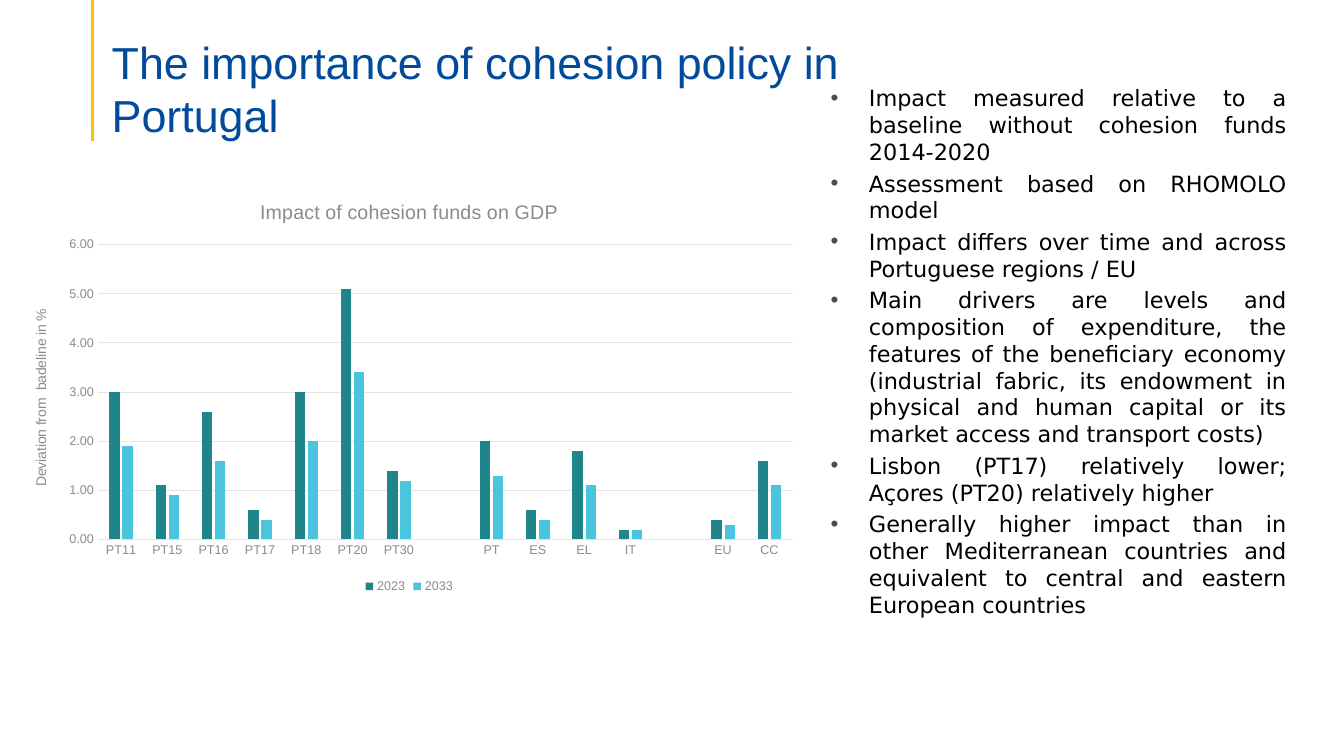
"""Build the slide on the importance of cohesion policy in Portugal."""
from lxml import etree
from pptx import Presentation
from pptx.chart.data import CategoryChartData
from pptx.dml.color import RGBColor
from pptx.enum.chart import XL_CHART_TYPE as CT, XL_LEGEND_POSITION as LP, XL_TICK_MARK as TM
from pptx.enum.shapes import MSO_CONNECTOR
from pptx.enum.text import PP_ALIGN
from pptx.oxml import parse_xml
from pptx.oxml.ns import nsdecls, qn
from pptx.util import Inches, Pt

TITLE = "The importance of cohesion policy in Portugal"
POINTS = [
    "Impact measured relative to a baseline without cohesion funds 2014-2020",
    "Assessment based on RHOMOLO model",
    "Impact differs over time and across Portuguese regions / EU",
    "Main drivers are levels and composition of expenditure, the features of the "
    "beneficiary economy (industrial fabric, its endowment in physical and human "
    "capital or its market access and transport costs)",
    "Lisbon (PT17) relatively lower; Açores (PT20) relatively higher",
    "Generally higher impact than in other Mediterranean countries and equivalent "
    "to central and eastern European countries",
]
CHART_TITLE = "Impact of cohesion funds on GDP"
AXIS_TITLE = "Deviation from  badeline in %"
REGIONS = ["PT11", "PT15", "PT16", "PT17", "PT18", "PT20", "PT30", "",
           "PT", "ES", "EL", "IT", "", "EU", "CC"]
TEAL, SKY = RGBColor(0x1E, 0x85, 0x8B), RGBColor(0x4B, 0xC5, 0xDE)
SERIES = [
    ("2023", TEAL, [3, 1.1, 2.6, 0.6, 3, 5.1, 1.4, None,
                    2, 0.6, 1.8, 0.2, None, 0.4, 1.6]),
    ("2033", SKY, [1.9, 0.9, 1.6, 0.4, 2, 3.4, 1.2, None,
                   1.3, 0.4, 1.1, 0.2, None, 0.3, 1.1]),
]
PLOT_AREA = {"x": 0.11, "y": 0.15, "w": 0.87, "h": 0.71}

BLUE = RGBColor(0x02, 0x4B, 0x9C)
GOLD = RGBColor(0xFF, 0xC0, 0x00)
BLACK = RGBColor(0, 0, 0)
DARK = RGBColor(0x4D, 0x4D, 0x4D)
GREY = RGBColor(0x8B, 0x8B, 0x8B)
PALE = RGBColor(0xE4, 0xE4, 0xE4)


def set_font(font, size, color, name="Arial"):
    font.size, font.name, font.bold = Pt(size), name, False
    font.color.rgb = color


def add_box(slide, *box):
    tf = slide.shapes.add_textbox(*map(Inches, box)).text_frame
    tf.word_wrap = True
    return tf


def add_run(p, text, *style):
    r = p.add_run()
    r.text = text
    set_font(r.font, *style)


def add_bullet(p):
    pPr = p._p.get_or_add_pPr()
    pPr.set("marL", str(Inches(0.38)))
    pPr.set("indent", str(-Inches(0.38)))
    color = etree.SubElement(pPr, qn("a:buClr"))
    etree.SubElement(color, qn("a:srgbClr")).set("val", str(DARK))
    etree.SubElement(pPr, qn("a:buFont")).set("typeface", "Arial")
    etree.SubElement(pPr, qn("a:buChar")).set("char", "•")


def add_accent(slide):
    line = slide.shapes.add_connector(
        MSO_CONNECTOR.STRAIGHT, Inches(0.92), 0, Inches(0.92), Inches(1.4))
    line.line.color.rgb, line.line.width = GOLD, Pt(2.25)
    etree.SubElement(line._element.spPr, qn("a:effectLst"))


def add_points(slide):
    tf = add_box(slide, 8.14, 0.79, 4.72, 5.92)
    for i, text in enumerate(POINTS):
        p = tf.add_paragraph() if i else tf.paragraphs[0]
        p.alignment = PP_ALIGN.JUSTIFY
        if i:
            p.space_before = Pt(3.2)
        add_bullet(p)
        add_run(p, text, 16, BLACK, "DejaVu Sans")


def add_impact_chart(slide):
    data = CategoryChartData(number_format="#,##0.00")
    data.categories = REGIONS
    for name, _, values in SERIES:
        data.add_series(name, values)
    box = map(Inches, (0.1, 1.81, 7.92, 4.12))
    chart = slide.shapes.add_chart(CT.COLUMN_CLUSTERED, *box, data).chart
    set_font(chart.font, 10, DARK)
    add_run(chart.chart_title.text_frame.paragraphs[0], CHART_TITLE, 14, GREY)
    chart.chart_title.include_in_layout = False

    plot = chart.plots[0]
    plot.gap_width, plot.overlap, plot.vary_by_categories = 219, -27, False
    for series, (_, color, _) in zip(plot.series, SERIES):
        series.format.fill.solid()
        series.format.fill.fore_color.rgb = color
        series.invert_if_negative = False

    cat, val = chart.category_axis, chart.value_axis
    for axis in (cat, val):
        axis.major_tick_mark = axis.minor_tick_mark = TM.NONE
        set_font(axis.tick_labels.font, 9, GREY)
    val.minimum_scale, val.maximum_scale, val.major_unit = 0, 6, 1
    val.tick_labels.number_format = "#,##0.00"
    val.tick_labels.number_format_is_linked = False
    val.format.line.fill.background()
    for line in (cat.format.line, val.major_gridlines.format.line):
        line.color.rgb, line.width = PALE, Pt(0.75)
    add_run(val.axis_title.text_frame.paragraphs[0], AXIS_TITLE, 10, GREY)

    chart.has_legend = True
    chart.legend.position = LP.BOTTOM
    chart.legend.include_in_layout = False
    set_font(chart.legend.font, 9, GREY)

    places = "".join(f'<c:{k} val="{v}"/>' for k, v in PLOT_AREA.items())
    layout = parse_xml(
        f'<c:layout {nsdecls("c")}><c:manualLayout><c:layoutTarget val="inner"/>'
        f'<c:xMode val="edge"/><c:yMode val="edge"/>{places}'
        '</c:manualLayout></c:layout>')
    area = chart._chartSpace.chart.plotArea
    for old in area.findall(qn("c:layout")):
        area.remove(old)
    area.insert(0, layout)


def main():
    prs = Presentation()
    prs.slide_width, prs.slide_height = Inches(13.33), Inches(7.5)
    slide = prs.slides.add_slide(prs.slide_layouts[6])
    add_accent(slide)
    title = add_box(slide, 1.01, 0.29, 8.37, 1.18)
    add_run(title.paragraphs[0], TITLE, 32, BLUE)
    add_points(slide)
    add_impact_chart(slide)
    prs.save("out.pptx")


if __name__ == "__main__":
    main()
